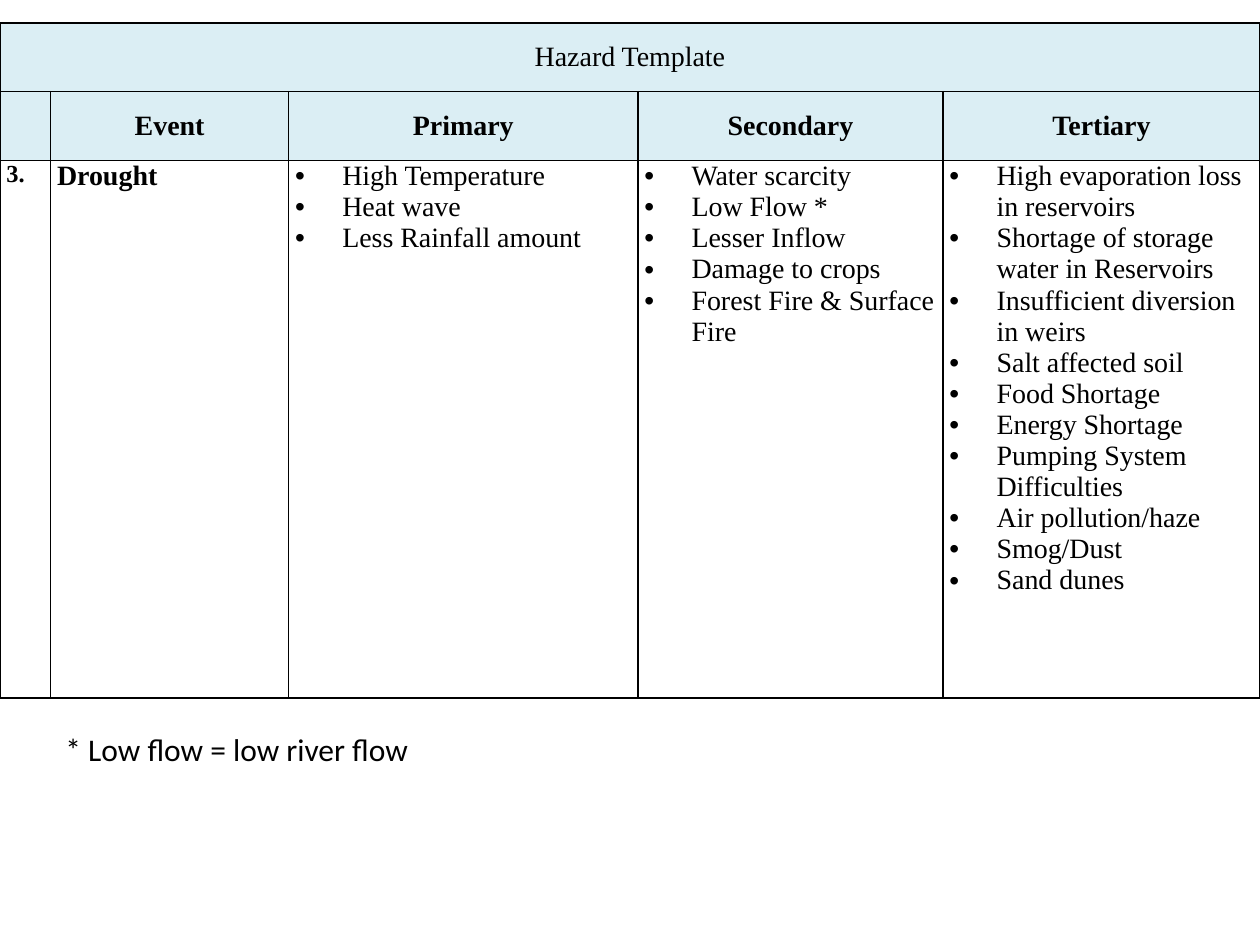
from lxml.etree import SubElement
from pptx import Presentation
from pptx.dml.color import RGBColor
from pptx.enum.text import MSO_ANCHOR, PP_ALIGN
from pptx.oxml import parse_xml
from pptx.oxml.ns import nsdecls, qn
from pptx.util import Cm, Pt

INK = RGBColor(0x00, 0x00, 0x00)
PAPER = RGBColor(0xFF, 0xFF, 0xFF)
TINT = RGBColor(0xDB, 0xEE, 0xF4)
SERIF = "Times New Roman"

COLS = [1.02, 4.8, 7.04, 6.15, 6.39]
ROWS = [1.39, 1.39, 10.83]
TITLE = "Hazard Template"
HEADS = ["", "Event", "Primary", "Secondary", "Tertiary"]
NUMBER, EVENT = "3.", "Drought"
EFFECTS = [
    ["High Temperature", "Heat wave", "Less Rainfall amount"],
    ["Water scarcity", "Low Flow *", "Lesser Inflow", "Damage to crops",
     "Forest Fire & Surface Fire"],
    ["High evaporation loss in reservoirs",
     "Shortage of storage water in Reservoirs",
     "Insufficient diversion in weirs", "Salt affected soil",
     "Food Shortage", "Energy Shortage", "Pumping System Difficulties",
     "Air pollution/haze", "Smog/Dust", "Sand dunes"],
]
NOTE = "* Low flow = low river flow"


def assign(target, values):
    for name, value in values.items():
        setattr(target, name, value)


def write(frame, lines, size=16, bold=False, font=SERIF,
          align=PP_ALIGN.LEFT, listed=False):
    """Fill a text frame with one paragraph per line."""
    for i, line in enumerate(lines):
        par = frame.add_paragraph() if i else frame.paragraphs[0]
        par.alignment = align
        run = par.add_run()
        run.text = line
        assign(run.font, {"name": font, "size": Pt(size), "bold": bold})
        run.font.color.rgb = INK
        if listed:
            add_bullet(par)


def add_bullet(par):
    props = par._p.get_or_add_pPr()
    props.set("marL", str(Cm(0.95)))
    props.set("indent", str(-Cm(0.95)))
    SubElement(props, qn("a:buFont")).set("typeface", "Arial")
    SubElement(props, qn("a:buChar")).set("char", "•")


def style_cell(cell, head):
    """Set margins, fill and borders of a cell."""
    assign(cell, {
        "margin_left": Cm(0.13), "margin_right": Cm(0.13),
        "margin_top": 0, "margin_bottom": 0,
        "vertical_anchor": MSO_ANCHOR.MIDDLE if head else MSO_ANCHOR.TOP,
    })
    if head:
        cell.fill.solid()
        cell.fill.fore_color.rgb = TINT
    else:
        cell.fill.background()
    props = cell._tc.get_or_add_tcPr()
    for i, side in enumerate("LRTB"):
        props.insert(i, parse_xml(
            f'<a:ln{side} {nsdecls("a")} w="{Pt(1)}"><a:solidFill>'
            f'<a:srgbClr val="{INK}"/></a:solidFill></a:ln{side}>'))


def add_hazards(slide, left, top, width, height):
    table = slide.shapes.add_table(
        len(ROWS), len(COLS), left, top, width, height).table
    assign(table, {"first_row": False, "horz_banding": False})
    for col, size in zip(table.columns, COLS):
        col.width = Cm(size)
    for row, size in zip(table.rows, ROWS):
        row.height = Cm(size)
    for r, row in enumerate(table.rows):
        for cell in row.cells:
            style_cell(cell, head=r < 2)

    table.cell(0, 0).merge(table.cell(0, len(COLS) - 1))
    mid = PP_ALIGN.CENTER
    write(table.cell(0, 0).text_frame, [TITLE], align=mid)
    for c, head in enumerate(HEADS):
        if head:
            write(table.cell(1, c).text_frame, [head], bold=True, align=mid)
    write(table.cell(2, 0).text_frame, [NUMBER], size=14, bold=True)
    write(table.cell(2, 1).text_frame, [EVENT], bold=True)
    for c, items in enumerate(EFFECTS, 2):
        write(table.cell(2, c).text_frame, items, listed=True)


def add_note(slide, left, top, width, height):
    frame = slide.shapes.add_textbox(left, top, width, height).text_frame
    frame.word_wrap = True
    write(frame, [NOTE], size=18, font="Calibri")


def main():
    deck = Presentation()
    assign(deck, {"slide_width": Cm(25.4), "slide_height": Cm(19.05)})
    slide = deck.slides.add_slide(deck.slide_layouts[6])
    slide.background.fill.solid()
    slide.background.fill.fore_color.rgb = PAPER
    add_hazards(slide, 0, Cm(0.46), Cm(sum(COLS)), Cm(sum(ROWS)))
    add_note(slide, Cm(1.07), Cm(14.6), Cm(11.23), Cm(1.02))
    deck.save("out.pptx")


if __name__ == "__main__":
    main()
